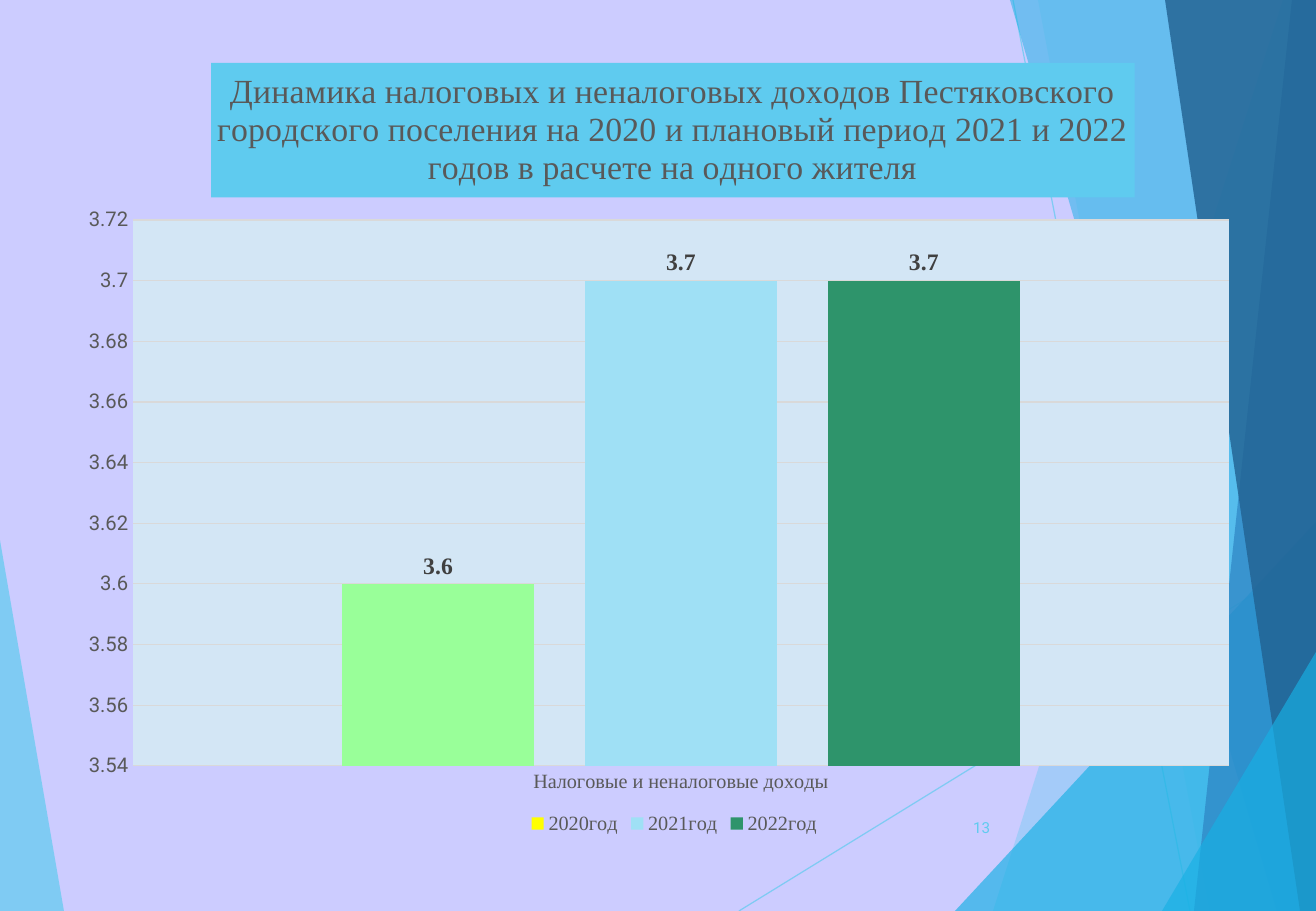
from lxml import etree
from pptx import Presentation
from pptx import util as u
from pptx.chart.data import CategoryChartData
from pptx.dml.color import RGBColor
from pptx.enum import chart as charts, shapes, text
from pptx.oxml import ns

PX = 914400 / 121.5
WIDTH, HEIGHT = 1316, 911
SERIF, SANS = "Times New Roman", "Roboto"
GRAY, RULE, SKY, BLUE = "595959", "D9D9D9", "5FCBEF", "17B0E4"
TITLE = ("Динамика налоговых и неналоговых доходов Пестяковского городского поселения "
         "на 2020 и плановый период 2021 и 2022 годов в расчете на одного жителя")
SERIES = [("2020год", 3.6, "FFFF00"), ("2021год", 3.7, "9FE0F5"), ("2022год", 3.7, "2E946B")]


def px(value):
    """Turn px into EMU."""
    return u.Emu(round(value * PX))


def rgb(value):
    """Turn a hex string into a colour."""
    return RGBColor.from_string(value)


def assign(target, values):
    """Set each attribute named in a dict."""
    for name, value in values.items():
        setattr(target, name, value)


def style_font(font, size, color, face, bold=False):
    """Format a font."""
    assign(font, {"size": u.Pt(size), "name": face, "bold": bold})
    font.color.rgb = rgb(color)


def paint(fill, color):
    """Fill with one solid colour."""
    fill.solid()
    fill.fore_color.rgb = rgb(color)


def rule(line, color):
    """Draw a thin solid line."""
    paint(line.fill, color)
    line.width = u.Pt(0.75)


def add_alpha(shape, percent):
    """Set the opacity of the colour of a shape."""
    color = next(shape.element.spPr.iter(ns.qn("a:srgbClr")))
    etree.SubElement(color, ns.qn("a:alpha"), val=str(percent * 1000))


def add_polygon(page, points, color, alpha):
    """Add a closed translucent outline."""
    builder = page.shapes.build_freeform(*points[0], scale=PX)
    builder.add_line_segments(points[1:], close=True)
    shape = builder.convert_to_shape()
    paint(shape.fill, color)
    shape.line.fill.background()
    shape.shadow.inherit = False
    add_alpha(shape, alpha)


def add_ray(page, start, end):
    """Add a thin translucent line."""
    ray = page.shapes.add_connector(shapes.MSO_CONNECTOR.STRAIGHT, *map(px, start + end))
    rule(ray.line, SKY)
    add_alpha(ray, 70)
    etree.SubElement(ray.element.spPr, ns.qn("a:effectLst"))


def add_backdrop(page, box):
    """Draw the facets along the edges of the box."""
    left, top, width, height = box
    right, bottom = left + width, top + height

    def band(upper, lower, color, alpha):
        """Add a facet between a slanted edge and the right side."""
        points = [(left + upper, top), (left + lower, bottom), (right, bottom), (right, top)]
        add_polygon(page, points, color, alpha)

    def corner(start, rise):
        """Add a triangle in the lower right corner."""
        points = [(left + start, bottom), (right, top + rise), (right, bottom)]
        add_polygon(page, points, BLUE, 66)

    add_polygon(page, [(left, top + 540), (left + 64, bottom), (left, bottom)], SKY, 70)
    add_ray(page, (left + 739, bottom), (right, top + 556))
    add_ray(page, (left + 1013, top), (left + 1190, bottom))
    band(1283, 993, SKY, 36)
    band(1038, 1210, SKY, 20)
    corner(955, 522)
    band(1010, 1277, BLUE, 50)
    band(1292, 1194, "2E83C3", 70)
    band(1165, 1300, "226292", 82)
    corner(1162, 652)


def place(element, index, box, *lengths):
    """Give a chart part a manual layout of x, y and optionally w, h in px."""
    for old in element.findall(ns.qn("c:layout")):
        element.remove(old)
    layout = etree.Element(ns.qn("c:layout"))
    manual = etree.SubElement(layout, ns.qn("c:manualLayout"))
    if len(lengths) == 4:
        etree.SubElement(manual, ns.qn("c:layoutTarget"), val="inner")
    for name in ("xMode", "yMode"):
        etree.SubElement(manual, ns.qn(f"c:{name}"), val="edge")
    for name, length, total in zip("xywh", lengths, box[2:] * 2):
        etree.SubElement(manual, ns.qn(f"c:{name}"), val=f"{length / total:.4f}")
    element.insert(index, layout)


def style_axes(chart):
    """Format both axes and the grid."""
    for axis, face in ((chart.category_axis, SERIF), (chart.value_axis, SANS)):
        assign(axis, {"major_tick_mark": charts.XL_TICK_MARK.NONE,
                      "minor_tick_mark": charts.XL_TICK_MARK.NONE})
        style_font(axis.tick_labels.font, 12, GRAY, face)
    rule(chart.category_axis.format.line, RULE)
    values = chart.value_axis
    assign(values, {"minimum_scale": 3.54, "maximum_scale": 3.72,
                    "major_unit": 0.02, "has_major_gridlines": True})
    assign(values.tick_labels, {"number_format": "General", "number_format_is_linked": False})
    values.format.line.fill.background()
    rule(values.major_gridlines.format.line, RULE)


def style_series(plot):
    """Colour the columns and label them."""
    assign(plot, {"gap_width": 219, "overlap": -27, "vary_by_categories": False})
    for series, (_, _, color) in zip(plot.series, SERIES):
        paint(series.format.fill, color)
        series.invert_if_negative = False
        labels = series.data_labels
        assign(labels, {"show_value": True, "position": charts.XL_LABEL_POSITION.OUTSIDE_END,
                        "number_format": "General", "number_format_is_linked": False})
        style_font(labels.font, 14, "404040", SERIF, True)
    paint(plot.series[0].points[0].format.fill, "99FF99")


def add_income_chart(page, box):
    """Add the column chart with its title and legend."""
    data = CategoryChartData()
    data.categories = ["Налоговые и неналоговые доходы"]
    for name, value, _ in SERIES:
        data.add_series(name, [value])
    chart = page.shapes.add_chart(
        charts.XL_CHART_TYPE.COLUMN_CLUSTERED, *map(px, box), data).chart
    style_font(chart.font, 10, "000000", SANS)
    assign(chart, {"has_title": True, "has_legend": True})
    title = chart.chart_title
    title.text_frame.text = TITLE
    style_font(title.text_frame.paragraphs[0].runs[0].font, 20, GRAY, SERIF)
    paint(title.format.fill, SKY)
    title.include_in_layout = False
    legend = chart.legend
    assign(legend, {"position": charts.XL_LEGEND_POSITION.BOTTOM, "include_in_layout": False})
    style_font(legend.font, 12, GRAY, SERIF)
    style_axes(chart)
    style_series(chart.plots[0])
    area = chart.element.chart.plotArea
    back = etree.SubElement(area, ns.qn("c:spPr"))
    fill = etree.SubElement(back, ns.qn("a:solidFill"))
    etree.SubElement(fill, ns.qn("a:srgbClr"), val="D3E6F5")
    place(area, 0, box, 89, 164, 1096, 546)
    place(title.element if hasattr(title, "element") else title._element, 1, box, 167, 7)
    place(legend._element, 1, box, 481, 752)


def add_page_number(page, box):
    """Add the number of the page."""
    frame = page.shapes.add_textbox(*map(px, box)).text_frame
    assign(frame, {"word_wrap": True, "vertical_anchor": text.MSO_ANCHOR.MIDDLE})
    para = frame.paragraphs[0]
    para.alignment = text.PP_ALIGN.RIGHT
    span = para.add_run()
    span.text = "13"
    style_font(span.font, 9, SKY, SANS)


def main():
    """Build the deck."""
    deck = Presentation()
    assign(deck, {"slide_width": px(WIDTH), "slide_height": px(HEIGHT)})
    page = deck.slides.add_slide(deck.slide_layouts[6])
    paint(page.background.fill, "CCCCFF")
    add_backdrop(page, (0, 0, WIDTH, HEIGHT))
    add_income_chart(page, (44, 56, 1203, 830))
    add_page_number(page, (928, 803, 74, 49))
    deck.save("out.pptx")


if __name__ == "__main__":
    main()
